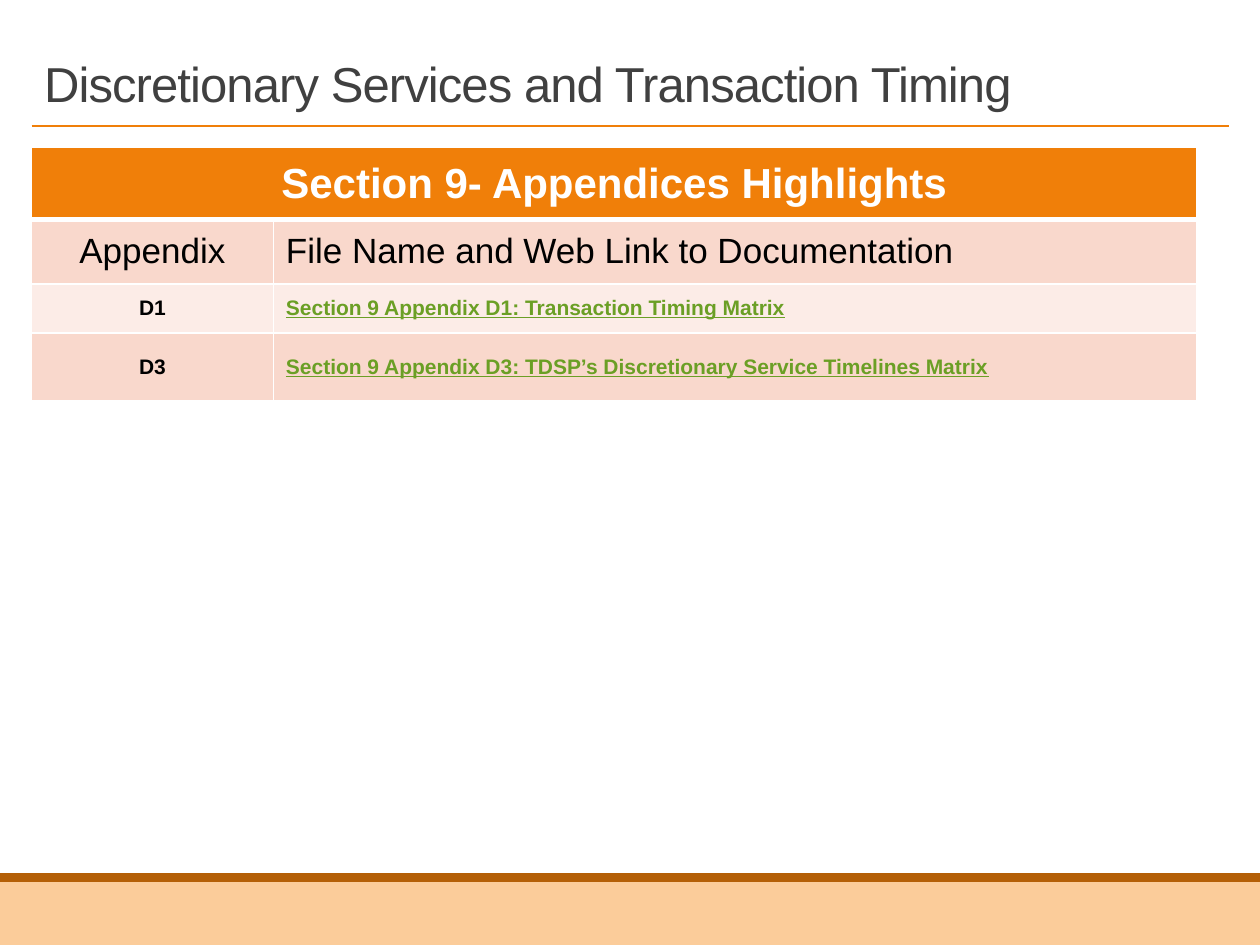
from lxml.etree import SubElement
from pptx import Presentation
from pptx.dml.color import RGBColor
from pptx.enum.shapes import MSO_CONNECTOR, MSO_SHAPE
from pptx.enum.text import MSO_ANCHOR, MSO_AUTO_SIZE, PP_ALIGN
from pptx.oxml.ns import qn
from pptx.util import Inches, Pt

# Content
TITLE = "Discretionary Services and Transaction Timing"
ROWS = [
    ["Section 9- Appendices Highlights"],
    ["Appendix", "File Name and Web Link to Documentation"],
    ["D1", "Section 9 Appendix D1: Transaction Timing Matrix"],
    ["D3", "Section 9 Appendix D3: TDSP’s Discretionary Service Timelines Matrix"],
]
COLORS = {
    "orange": "F07F09", "rust": "B45F07", "peach": "FBCC9A",
    "pink": "F9D8CC", "pale": "FCECE7", "white": "FFFFFF",
    "black": "000000", "gray": "404040", "green": "6B9F25",
}
# Row height, fill, text size, bold
STYLES = [
    (0.54, "orange", 24, True),
    (0.48, "pink", 20, False),
    (0.39, "pale", 12, True),
    (0.54, "pink", 12, True),
]
WIDTHS = [1.92, 7.33]
BANDS = [(7, 0.5, "peach"), (6.93, 0.07, "rust")]
LEFT = 0.25


def rgb(name):
    return RGBColor.from_string(COLORS[name])


def add_run(para, text, size, color, bold=False):
    run = para.add_run()
    run.text = text
    font = run.font
    font.name, font.size, font.bold = "Arial", Pt(size), bold
    font.color.rgb = rgb(color)
    return run


def add_borders(cell, top, bottom):
    props = cell._tc.get_or_add_tcPr()
    for side, width in zip("LRTB", (1, 1, top, bottom)):
        line = SubElement(props, qn(f"a:ln{side}"), w=str(Pt(width)))
        fill = SubElement(line, qn("a:solidFill"))
        SubElement(fill, qn("a:srgbClr"), val=COLORS["white"])


def main():
    deck = Presentation()
    deck.slide_width, deck.slide_height = Inches(10), Inches(7.5)
    slide = deck.slides.add_slide(deck.slide_layouts[5])
    shapes = slide.shapes

    # Footer bands
    for top, height, color in BANDS:
        band = shapes.add_shape(MSO_SHAPE.RECTANGLE, 0, Inches(top),
                                deck.slide_width, Inches(height))
        band.shadow.inherit = False
        band.fill.solid()
        band.fill.fore_color.rgb = rgb(color)
        band.line.fill.background()

    # Rule under the title
    rule = shapes.add_connector(MSO_CONNECTOR.STRAIGHT, Inches(LEFT), Inches(1),
                                Inches(10 - LEFT), Inches(1))
    rule.line.color.rgb = rgb("orange")
    rule.line.width = Pt(1)
    SubElement(rule._element.spPr, qn("a:effectLst"))

    # Title
    title = shapes.title
    title.left, title.top = Inches(LEFT), Inches(0.25)
    title.width, title.height = Inches(8.25), Inches(0.69)
    frame = title.text_frame
    frame.auto_size = MSO_AUTO_SIZE.NONE
    frame.word_wrap = True
    frame.vertical_anchor = MSO_ANCHOR.BOTTOM
    para = frame.paragraphs[0]
    para.alignment = PP_ALIGN.LEFT
    para.line_spacing = 0.85
    run = add_run(para, TITLE, 28, "gray")
    run.font._element.set("spc", "-50")

    # Appendix table
    height = sum(style[0] for style in STYLES)
    table = shapes.add_table(len(ROWS), len(WIDTHS), Inches(LEFT), Inches(1.17),
                             Inches(sum(WIDTHS)), Inches(height)).table
    for col, width in zip(table.columns, WIDTHS):
        col.width = Inches(width)
    table.cell(0, 0).merge(table.cell(0, 1))

    for r, (texts, (tall, shade, size, bold)) in enumerate(zip(ROWS, STYLES)):
        table.rows[r].height = Inches(tall)
        for c in range(len(WIDTHS)):
            cell = table.cell(r, c)
            add_borders(cell, 3 if r == 1 else 1, 3 if r == 0 else 1)
            cell.fill.solid()
            cell.fill.fore_color.rgb = rgb(shade)
            cell.margin_left = cell.margin_right = Inches(0.1)
            cell.margin_top = cell.margin_bottom = Inches(0.1)
            cell.vertical_anchor = MSO_ANCHOR.MIDDLE
            if c >= len(texts):
                continue
            link = r > 1 and c == 1
            color = "white" if r == 0 else "green" if link else "black"
            para = cell.text_frame.paragraphs[0]
            para.alignment = PP_ALIGN.LEFT if c else PP_ALIGN.CENTER
            run = add_run(para, texts[c], size, color, bold)
            run.font.underline = link

    deck.save("out.pptx")


if __name__ == "__main__":
    main()
